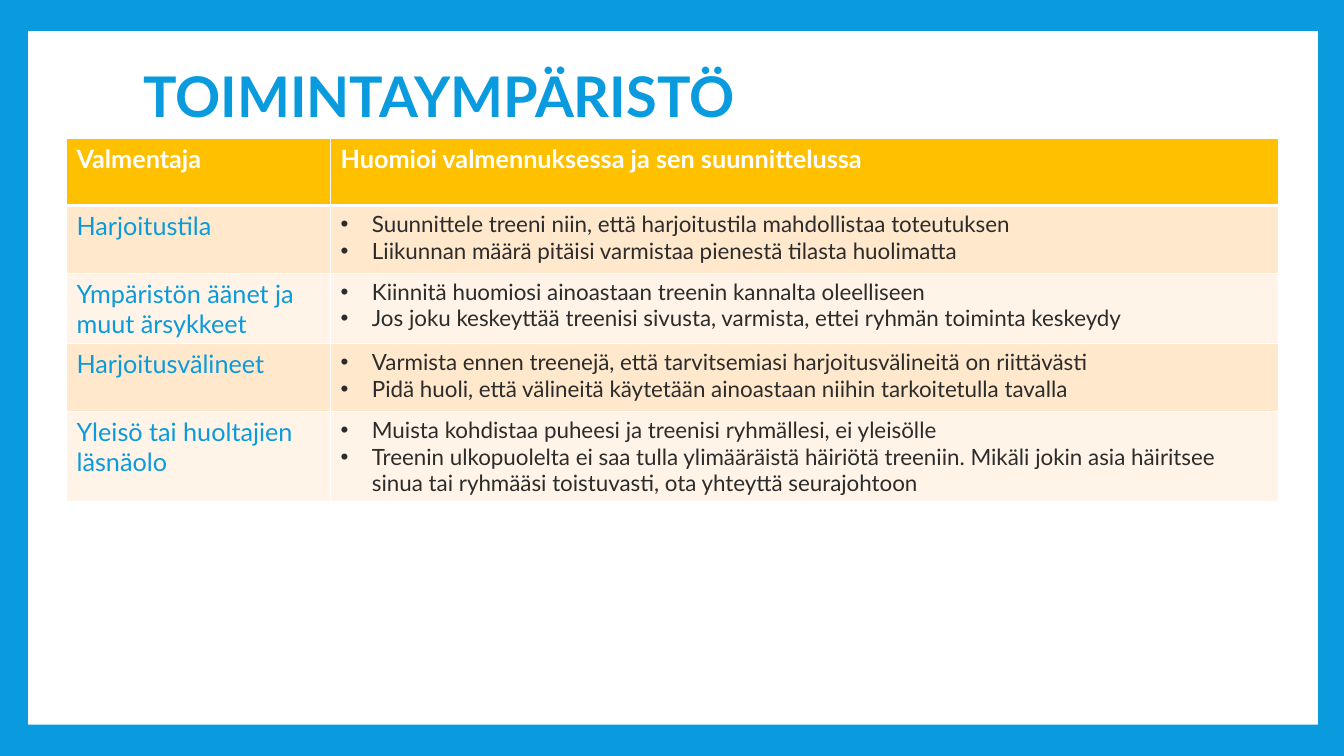
from lxml import etree
from pptx import Presentation
from pptx.dml.color import RGBColor
from pptx.enum import shapes, text
from pptx.oxml import ns
from pptx.util import Inches, Pt

BLUE = RGBColor(0x09, 0x9B, 0xDD)
WHITE = RGBColor(0xFF, 0xFF, 0xFF)
GOLD = RGBColor(0xFF, 0xC0, 0x00)
PEACH = RGBColor(0xFF, 0xE8, 0xCC)
CREAM = RGBColor(0xFF, 0xF4, 0xE7)
DARK = RGBColor(0x2C, 0x2C, 0x2C)

HEAD = ("Valmentaja", ["Huomioi valmennuksessa ja sen suunnittelussa"])
ROWS = [
    ("Harjoitustila", [
        "Suunnittele treeni niin, että harjoitustila mahdollistaa toteutuksen",
        "Liikunnan määrä pitäisi varmistaa pienestä tilasta huolimatta"]),
    ("Ympäristön äänet ja muut ärsykkeet", [
        "Kiinnitä huomiosi ainoastaan treenin kannalta oleelliseen",
        "Jos joku keskeyttää treenisi sivusta, varmista, ettei ryhmän toiminta keskeydy"]),
    ("Harjoitusvälineet", [
        "Varmista ennen treenejä, että tarvitsemiasi harjoitusvälineitä on riittävästi",
        "Pidä huoli, että välineitä käytetään ainoastaan niihin tarkoitetulla tavalla"]),
    ("Yleisö tai huoltajien läsnäolo", [
        "Muista kohdistaa puheesi ja treenisi ryhmällesi, ei yleisölle",
        "Treenin ulkopuolelta ei saa tulla ylimääräistä häiriötä treeniin. Mikäli jokin asia "
        "häiritsee sinua tai ryhmääsi toistuvasti, ota yhteyttä seurajohtoon"]),
]


def style(par, size, color, bold=False):
    look = {"name": "Lato", "size": Pt(size), "bold": bold}
    for key, value in look.items():
        setattr(par.runs[0].font, key, value)
    par.runs[0].font.color.rgb = color


def border(cell, side, width):
    line = etree.SubElement(cell._tc.get_or_add_tcPr(), ns.qn(f"a:ln{side}"), w=str(Pt(width)))
    fill = etree.SubElement(line, ns.qn("a:solidFill"))
    etree.SubElement(fill, ns.qn("a:srgbClr"), val=str(WHITE))


deck = Presentation()
deck.slide_width, deck.slide_height = Inches(13.33), Inches(7.5)
slide = deck.slides.add_slide(deck.slide_layouts[5])
slide.background.fill.solid()
slide.background.fill.fore_color.rgb = BLUE

panel = slide.shapes.add_shape(
    shapes.MSO_SHAPE.RECTANGLE, Inches(0.28), Inches(0.31), Inches(12.79), Inches(6.88))
panel.shadow.inherit = False
panel.fill.solid()
panel.fill.fore_color.rgb = WHITE
panel.line.fill.background()
slide.shapes._spTree.insert(2, panel._element)  # behind the title

title = slide.shapes.title
title.left, title.top = Inches(1.32), Inches(0.17)
title.width, title.height = Inches(10.7), Inches(1.65)
title.text_frame.text = "TOIMINTAYMPÄRISTÖ"
title.text_frame.vertical_anchor = text.MSO_ANCHOR.MIDDLE
par = title.text_frame.paragraphs[0]
par.alignment = text.PP_ALIGN.LEFT
par.line_spacing = 0.85
style(par, 40, BLUE, True)

table = slide.shapes.add_table(
    len(ROWS) + 1, 2, Inches(0.66), Inches(1.37), Inches(12.02), Inches(3.4)).table
for col, width in zip(table.columns, (2.62, 9.4)):
    col.width = Inches(width)
for row in table.rows:
    row.height = Inches(0.67)

for r, (topic, notes) in enumerate([HEAD] + ROWS):
    head = r == 0
    for c, lines in enumerate(([topic], notes)):
        cell = table.cell(r, c)
        widths = {"L": 1, "R": 1, "T": 3 if r == 1 else 1, "B": 3 if head else 1}
        for side, width in widths.items():
            border(cell, side, width)
        cell.fill.solid()
        cell.fill.fore_color.rgb = GOLD if head else PEACH if r % 2 else CREAM
        cell.text_frame.text = "\n".join(lines)
        for par in cell.text_frame.paragraphs:
            if head:
                style(par, 18, WHITE, True)
            elif c == 0:
                style(par, 18, BLUE)
            else:
                style(par, 16, DARK)
                props = par._p.get_or_add_pPr()
                props.set("marL", str(Inches(0.31)))
                props.set("indent", str(Inches(-0.31)))
                etree.SubElement(props, ns.qn("a:buFont"), typeface="Arial")
                etree.SubElement(props, ns.qn("a:buChar"), char="•")

deck.save("out.pptx")
